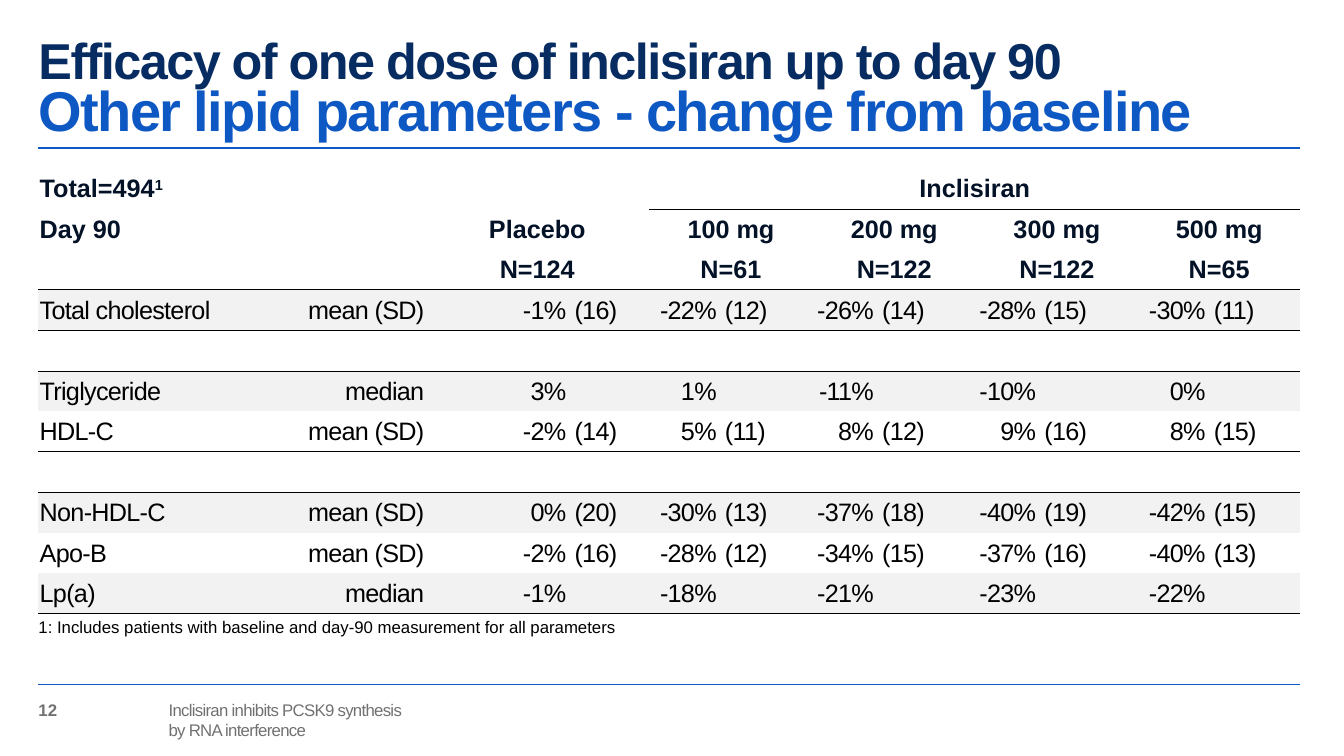
from dataclasses import dataclass

import pptx
import pptx.dml.color
import pptx.enum.shapes
import pptx.enum.text
import pptx.oxml.ns
import pptx.util
from lxml import etree

Cm, Pt = pptx.util.Cm, pptx.util.Pt
Align, Anchor = pptx.enum.text.PP_ALIGN, pptx.enum.text.MSO_ANCHOR
qn = pptx.oxml.ns.qn


@dataclass(frozen=True)
class Theme:
    face: str = "Arial"
    navy: str = "072C62"
    blue: str = "0E58C4"
    head: str = "031227"
    black: str = "000000"
    grey: str = "737071"
    band: str = "F2F2F2"
    white: str = "FFFFFF"
    title: int = 36
    sub: int = 40
    body: int = 18
    note: int = 12


@dataclass(frozen=True)
class Style:
    size: int
    color: str
    bold: bool = False
    space: float = 0


@dataclass(frozen=True)
class Row:
    name: str = ""
    stat: str = ""
    values: tuple[str, ...] = ()
    band: bool = False
    under: float = 0


THEME = Theme()
TITLE = Style(THEME.title, THEME.navy, True, -1.1)
SUB = Style(THEME.sub, THEME.blue, True, -1.1)
HEAD = Style(THEME.body, THEME.head, True)
BODY = Style(THEME.body, THEME.black, False, -0.5)
NOTE = Style(THEME.note, THEME.black)
PAGE = Style(THEME.note, THEME.grey, True)
FOOT = Style(THEME.note, THEME.grey, False, -0.5)

LEFT, RIGHT = 0.97, 32.77
HIGH = 1.02
WIDTHS = (5.36, 4.39, 3.58, 2.06, 1.73, 2.39, 1.57, 2.54, 1.55, 2.54, 1.73, 2.36)
THIN, THICK = 0.25, 1
FIRST = 2  # first value column
DRUG = 4  # first drug column

DOSES = ("Placebo", "100 mg", "200 mg", "300 mg", "500 mg")
COUNTS = ("N=124", "N=61", "N=122", "N=122", "N=65")
HEADS = (
    Row("Total=494", under=THIN),
    Row("Day 90", values=DOSES),
    Row(values=COUNTS, under=THICK),
)
LIPIDS = (
    Row("Total cholesterol", "mean (SD)",
        ("-1% (16)", "-22% (12)", "-26% (14)", "-28% (15)", "-30% (11)"), True, THIN),
    Row(under=THIN),
    Row("Triglyceride", "median", ("3%", "1%", "-11%", "-10%", "0%"), True),
    Row("HDL-C", "mean (SD)",
        ("-2% (14)", "5% (11)", "8% (12)", "9% (16)", "8% (15)"), under=THIN),
    Row(under=THIN),
    Row("Non-HDL-C", "mean (SD)",
        ("0% (20)", "-30% (13)", "-37% (18)", "-40% (19)", "-42% (15)"), True),
    Row("Apo-B", "mean (SD)",
        ("-2% (16)", "-28% (12)", "-34% (15)", "-37% (16)", "-40% (13)")),
    Row("Lp(a)", "median", ("-1%", "-18%", "-21%", "-23%", "-22%"), True, THICK),
)
ROWS = HEADS + LIPIDS


def tint(hue: str) -> pptx.dml.color.RGBColor:
    return pptx.dml.color.RGBColor.from_string(hue)


def dress(run, style: Style) -> None:
    font = run.font
    font.name, font.size, font.bold = THEME.face, Pt(style.size), style.bold
    font.color.rgb = tint(style.color)
    run._r.get_or_add_rPr().set("spc", str(round(style.space * 100)))


def rule(slide, y: float) -> None:
    kind = pptx.enum.shapes.MSO_CONNECTOR.STRAIGHT
    line = slide.shapes.add_connector(kind, Cm(RIGHT), Cm(y), Cm(LEFT), Cm(y))
    line.line.color.rgb, line.line.width = tint(THEME.blue), Pt(1)
    etree.SubElement(line._element.spPr, qn("a:effectLst"))


def add_box(slide, y: float, w: float, h: float):
    frame = slide.shapes.add_textbox(Cm(LEFT), Cm(y), Cm(w), Cm(h)).text_frame
    frame.word_wrap = True
    frame.margin_left = frame.margin_right = 0
    frame.margin_top = frame.margin_bottom = 0
    return frame


def edge(cell, over: float, under: float) -> None:
    props = cell._tc.get_or_add_tcPr()
    for side, width in (("L", 0), ("R", 0), ("T", over), ("B", under)):
        line = etree.SubElement(props, qn(f"a:ln{side}"), w=str(Pt(width)))
        if width:
            fill = etree.SubElement(line, qn("a:solidFill"))
            etree.SubElement(fill, qn("a:srgbClr"), val=THEME.black)
        else:
            etree.SubElement(line, qn("a:noFill"))


def put(cell, text: str, style: Style, align=Align.LEFT, inset: float = 0.03) -> None:
    cell.margin_left = Cm(inset)
    para = cell.text_frame.paragraphs[0]
    para.text, para.alignment = text, align
    for run in para.runs:
        dress(run, style)


def draw_grid(slide) -> None:
    shape = slide.shapes.add_table(len(ROWS), len(WIDTHS), Cm(LEFT), Cm(4.24),
                                   Cm(sum(WIDTHS)), Cm(HIGH * len(ROWS)))
    grid = shape.table
    grid.first_row = grid.horz_banding = False
    for col, width in zip(grid.columns, WIDTHS):
        col.width = Cm(width)

    # Fills, borders and margins
    for y, row in enumerate(ROWS):
        grid.rows[y].height = Cm(HIGH)
        for x in range(len(WIDTHS)):
            cell = grid.cell(y, x)
            over = ROWS[y - 1].under if y else 0
            under = row.under
            if x < DRUG:
                over, under = (0 if y == 1 else over), (0 if y == 0 else under)
            edge(cell, over, under)
            cell.fill.solid()
            cell.fill.fore_color.rgb = tint(THEME.band if row.band else THEME.white)
            cell.vertical_anchor = Anchor.MIDDLE
            cell.margin_left = cell.margin_right = cell.margin_top = Cm(0.03)
            cell.margin_bottom = 0

    # Heading rows
    for y, row in enumerate(HEADS):
        put(grid.cell(y, 0), row.name, HEAD)
        grid.cell(y, FIRST).merge(grid.cell(y, FIRST + 1))
        for i, value in enumerate(row.values):
            x = FIRST + 2 * i
            if i:
                grid.cell(y, x).merge(grid.cell(y, x + 1))
            put(grid.cell(y, x), value, HEAD, Align.CENTER)
    grid.cell(0, DRUG).merge(grid.cell(0, len(WIDTHS) - 1))
    put(grid.cell(0, DRUG), "Inclisiran", HEAD, Align.CENTER)
    mark = grid.cell(0, 0).text_frame.paragraphs[0].add_run()
    mark.text = "1"
    dress(mark, HEAD)
    mark._r.get_or_add_rPr().set("baseline", "30000")

    # Lipid rows
    for y, row in enumerate(LIPIDS, len(HEADS)):
        put(grid.cell(y, 0), row.name, BODY)
        put(grid.cell(y, 1), row.stat, BODY, Align.RIGHT)
        for i, value in enumerate(row.values):
            change, _, spread = value.partition(" ")
            put(grid.cell(y, FIRST + 2 * i), change, BODY, Align.RIGHT)
            put(grid.cell(y, FIRST + 2 * i + 1), spread, BODY, inset=0.18)


def draw_foot(slide) -> None:
    para = add_box(slide, 17.63, 32.13, 1.02).paragraphs[0]
    tabs = etree.SubElement(para._p.get_or_add_pPr(), qn("a:tabLst"))
    etree.SubElement(tabs, qn("a:tab"), pos=str(Cm(3.28)), algn="l")
    para.text = "12"
    para.add_run().text = "\tInclisiran inhibits PCSK9 synthesis"
    para.add_line_break()
    para.add_run().text = "\tby RNA interference"
    for run, style in zip(para.runs, (PAGE, FOOT, FOOT)):
        dress(run, style)


def main() -> None:
    deck = pptx.Presentation()
    deck.slide_width, deck.slide_height = Cm(33.87), Cm(19.05)
    slide = deck.slides.add_slide(deck.slide_layouts[6])

    # Title
    frame = add_box(slide, 0.89, RIGHT - LEFT, 2.84)
    frame.vertical_anchor = Anchor.MIDDLE
    para = frame.paragraphs[0]
    para.text = ("Efficacy of one dose of inclisiran up to day 90\n"
                 "Other lipid parameters - change from baseline")
    para.line_spacing = 0.8
    for run, style in zip(para.runs, (TITLE, SUB)):
        dress(run, style)

    # Rules, table and notes
    for y in (3.73, 17.25):
        rule(slide, y)
    draw_grid(slide)
    frame = add_box(slide, 15.42, 30.48, 2)
    frame.margin_top = frame.margin_bottom = Cm(0.18)
    para = frame.paragraphs[0]
    para.text = "1: Includes patients with baseline and day-90 measurement for all parameters"
    para.line_spacing = 0.9
    dress(para.runs[0], NOTE)
    draw_foot(slide)
    deck.save("out.pptx")


if __name__ == "__main__":
    main()
